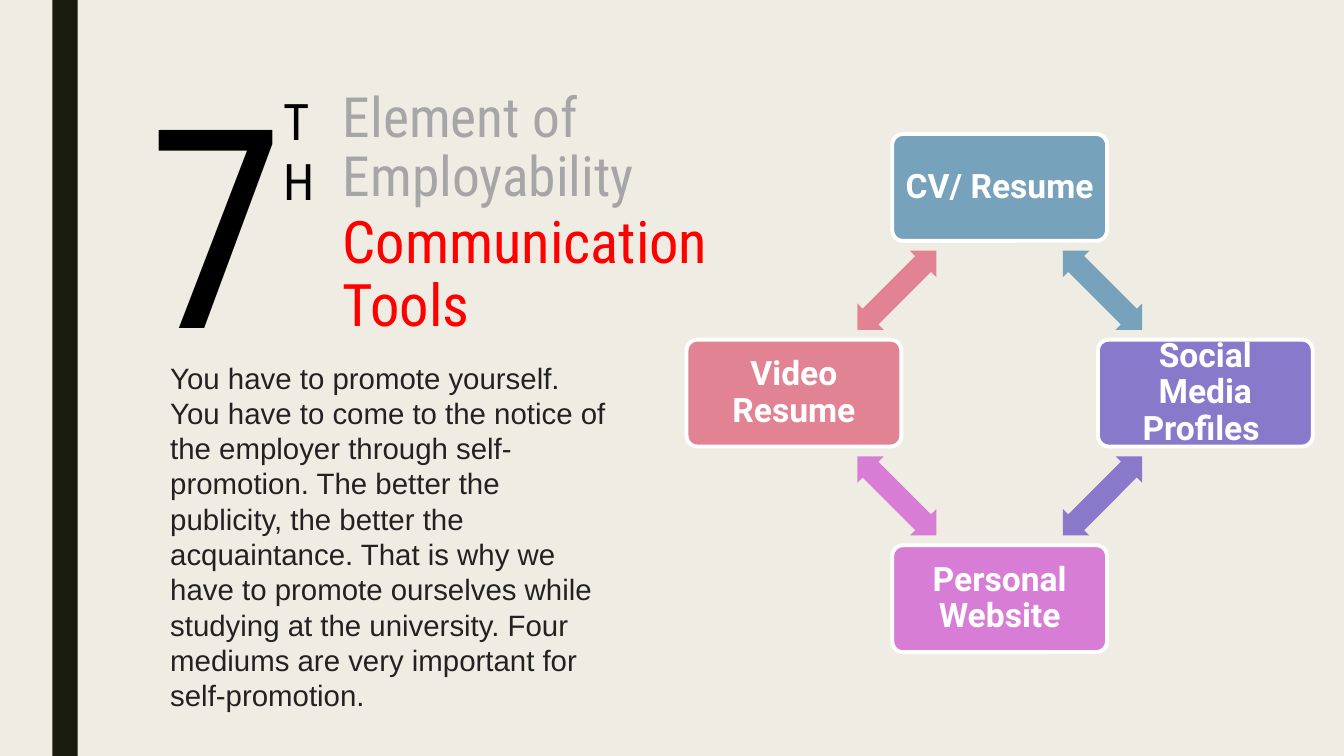
from pptx import Presentation
from pptx.dml.color import RGBColor
from pptx.enum.shapes import MSO_SHAPE
from pptx.enum.text import MSO_ANCHOR, PP_ALIGN
from pptx.util import Inches, Pt

RECT, CARD = MSO_SHAPE.RECTANGLE, MSO_SHAPE.ROUNDED_RECTANGLE
DOUBLE_ARROW = MSO_SHAPE.LEFT_RIGHT_ARROW
TOP, MIDDLE = MSO_ANCHOR.TOP, MSO_ANCHOR.MIDDLE
LEFT, CENTER = PP_ALIGN.LEFT, PP_ALIGN.CENTER

COLORS = {
    "background": "EFEDE3", "bar": "191B0E", "black": "000000",
    "body": "222222", "gray": "A6A6A6", "red": "FF0000", "white": "FFFFFF",
    "blue": "77A2BB", "purple": "8879CA", "orchid": "D77DD6", "rose": "E28394",
}
HEADING_FONT = "Roboto Condensed"

TITLE = "Element of Employability"
NUMBER, ORDINAL = "7", "TH"
TOPIC = "Communication Tools"
BODY = (
    "You have to promote yourself. You have to come to the notice of the "
    "employer through self-promotion. The better the publicity, the better "
    "the acquaintance. That is why we have to promote ourselves while "
    "studying at the university. Four mediums are very important for "
    "self-promotion."
)
# Clockwise from the top: label, colour, direction from the cycle centre
MEDIUMS = [
    ("CV/ Resume", "blue", (0, -1)),
    ("Social Media Profiles ", "purple", (1, 0)),
    ("Personal Website", "orchid", (0, 1)),
    ("Video Resume", "rose", (-1, 0)),
]
CYCLE_X, CYCLE_Y, RADIUS = 9.915, 3.9, 2.04
CARD_W, CARD_H = 2.13, 1.06
ARROW_W, ARROW_H = 1.11, 0.37


def color(name):
    return RGBColor.from_string(COLORS[name])


def write(shape, text, size, font, ink, align=LEFT, anchor=TOP,
          spacing=None, bold=False, wrap=True):
    frame = shape.text_frame
    frame.text = text
    frame.word_wrap = wrap
    frame.vertical_anchor = anchor
    paragraph = frame.paragraphs[0]
    paragraph.alignment = align
    if spacing:
        paragraph.line_spacing = spacing
    style = paragraph.runs[0].font
    style.size, style.name, style.bold = Pt(size), font, bold
    style.color.rgb = color(ink)


def add_text(box, *args, **options):
    label = slide.shapes.add_textbox(*map(Inches, box))
    write(label, *args, **options)
    return label


def add_filled(kind, box, fill):
    shape = slide.shapes.add_shape(kind, *map(Inches, box))
    shape.shadow.inherit = False
    shape.fill.solid()
    shape.fill.fore_color.rgb = color(fill)
    shape.line.fill.background()
    return shape


def centered(x, y, width, height):
    return x - width / 2, y - height / 2, width, height


prs = Presentation()
prs.slide_width, prs.slide_height = Inches(13.33), Inches(7.5)
slide = prs.slides.add_slide(prs.slide_layouts[5])
slide.background.fill.solid()
slide.background.fill.fore_color.rgb = color("background")

# Side bar
add_filled(RECT, (0.52, 0, 0.25, 7.5), "bar")

# Heading and body text
title = slide.shapes.title
title.left, title.top, title.width, title.height = map(
    Inches, (3.3, 0.84, 3.36, 1.48))
write(title, TITLE, 39.6, HEADING_FONT, "gray", spacing=0.89)
add_text((1.36, 0.45, 1.29, 3.45), NUMBER, 199, HEADING_FONT, "black", wrap=False)
add_text((1.59, 3.52, 4.56, 3.64), BODY, 21, "Arial", "body")
add_text((3.3, 2.07, 4.03, 1.48), TOPIC, 41.9, HEADING_FONT, "red", spacing=0.89)
ordinal = add_text((2.71, 0.84, 0.72, 0.71), ORDINAL, 36, HEADING_FONT, "black")
ordinal.text_frame.margin_right = Inches(0.25)  # stacks the two letters

# Cycle of mediums, each followed by the arrow to the next one
for i, (medium, fill, (dx, dy)) in enumerate(MEDIUMS):
    card = add_filled(CARD, centered(CYCLE_X + RADIUS * dx, CYCLE_Y + RADIUS * dy,
                                     CARD_W, CARD_H), fill)
    card.adjustments[0] = 0.1
    card.line.color.rgb = color("white")
    card.line.width = Pt(2.75)
    write(card, medium, 24, "Roboto", "white", CENTER, MIDDLE, 0.9, True)

    next_dx, next_dy = MEDIUMS[(i + 1) % len(MEDIUMS)][2]
    arrow = add_filled(DOUBLE_ARROW, centered(
        CYCLE_X + RADIUS * (dx + next_dx) / 2,
        CYCLE_Y + RADIUS * (dy + next_dy) / 2, ARROW_W, ARROW_H), fill)
    arrow.adjustments[0], arrow.adjustments[1] = 0.6, 0.5
    arrow.rotation = 45 + 90 * i

prs.save("out.pptx")
